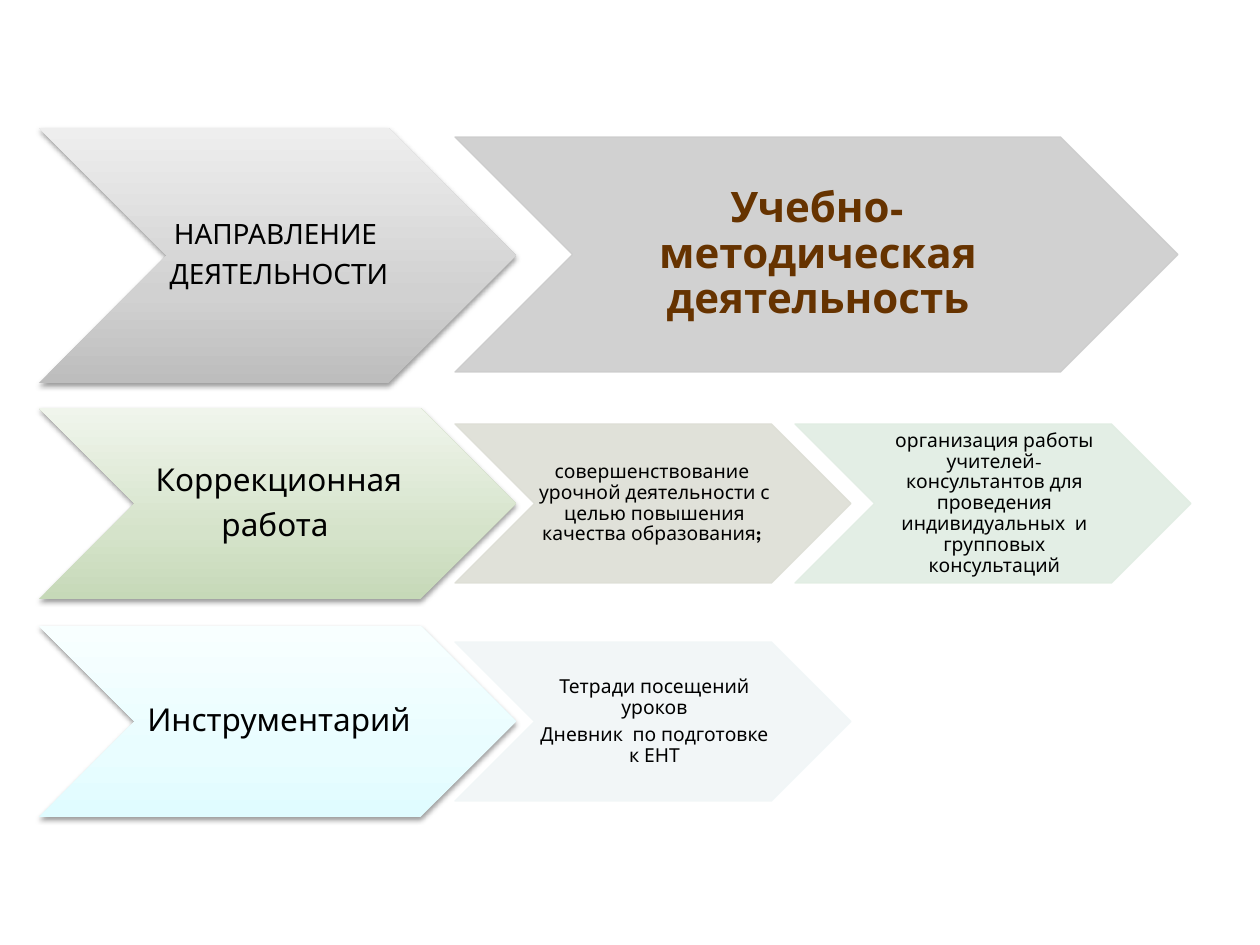
from dataclasses import dataclass

from lxml import etree
from pptx import Presentation
from pptx.dml.color import RGBColor
from pptx.enum.shapes import MSO_SHAPE
from pptx.enum.text import MSO_ANCHOR, PP_ALIGN
from pptx.oxml.ns import qn
from pptx.util import Emu, Pt

CHEVRON = MSO_SHAPE.CHEVRON
MIDDLE = MSO_ANCHOR.MIDDLE
CENTER = PP_ALIGN.CENTER

PX = 914400 / 126
BLANK_LAYOUT = 6

# Columns
LEAD_LEFT, LEAD_WIDTH = 39, 477
DETAIL_LEFT, DETAIL_STEP = 455, 340


@dataclass(frozen=True)
class Theme:
    font: str = "League Spartan"
    ink: str = "000000"
    accent: str = "663300"
    # Gradients run from bottom to top
    grey: tuple = ("BDBDBD", "D1D1D1", "EEEEEE")
    green: tuple = ("C6D9B8", "D5E3CA", "F0F5EC")
    aqua: tuple = ("E0FCFF", "E9FDFF", "F8FFFF")
    # Detail fills
    silver: str = "CCCCCC"
    sand: str = "DDDED5"
    mint: str = "E1EDE3"
    ice: str = "F1F6F7"
    detail_alpha: int = 90
    heading_size: int = 24
    topic_size: int = 18
    caption_size: int = 16
    body_size: int = 11


THEME = Theme()


def px(length):
    return Emu(round(length * PX))


def add_color(parent, color, alpha=None):
    node = etree.SubElement(parent, qn("a:srgbClr"), val=color)
    if alpha is not None:
        etree.SubElement(node, qn("a:alpha"), val=str(alpha * 1000))


def add_chevron(slide, left, top, width, height):
    chevron = slide.shapes.add_shape(
        CHEVRON, px(left), px(top), px(width), px(height))
    chevron.shadow.inherit = False
    return chevron


def write_text(chevron, paragraphs, size, color=THEME.ink, bold=False):
    """Each paragraph is a list of (text, bold) runs or a plain string."""
    frame = chevron.text_frame
    frame.word_wrap = True
    frame.vertical_anchor = MIDDLE
    frame.margin_left, frame.margin_right = px(3), 0
    frame.margin_top = frame.margin_bottom = px(2)
    for index, content in enumerate(paragraphs):
        paragraph = frame.add_paragraph() if index else frame.paragraphs[0]
        paragraph.alignment = CENTER
        paragraph.line_spacing = 0.9
        paragraph.space_after = Pt(round(size * 0.35, 2))
        runs = [(content, bold)] if isinstance(content, str) else content
        for text, run_bold in runs:
            run = paragraph.add_run()
            run.text = text
            run.font.name = THEME.font
            run.font.size = Pt(size)
            run.font.bold = run_bold
            run.font.color.rgb = RGBColor.from_string(color)


def add_lead(slide, top, height, gradient, paragraphs, size):
    """Left chevron with a three-stop gradient and a soft shadow."""
    lead = add_chevron(slide, LEAD_LEFT, top, LEAD_WIDTH, height)
    lead.line.fill.background()
    lead.fill.gradient()
    lead.fill.gradient_angle = 90
    properties = lead.element.spPr
    stops = properties.find(qn("a:gradFill")).find(qn("a:gsLst"))
    for stop in list(stops):
        stops.remove(stop)
    for position, color in zip((0, 35, 100), gradient):
        stop = etree.SubElement(stops, qn("a:gs"), pos=str(position * 1000))
        add_color(stop, color)
    shadow = etree.SubElement(
        properties.find(qn("a:effectLst")), qn("a:outerShdw"),
        blurRad=str(Pt(3.1)), dist=str(Pt(1.6)), dir="5400000", rotWithShape="0")
    add_color(shadow, "000000", 38)
    write_text(lead, paragraphs, size)


def add_detail(slide, column, top, width, height, fill_color, paragraphs,
               **text_format):
    """Translucent chevron to the right of a lead."""
    left = DETAIL_LEFT + column * DETAIL_STEP
    detail = add_chevron(slide, left, top, width, height)
    detail.line.width = Pt(0.75)
    for paint in (detail.fill, detail.line.fill):
        paint.solid()
        paint.fore_color.rgb = RGBColor.from_string(fill_color)
    for node in list(detail.element.spPr.iter(qn("a:srgbClr"))):
        etree.SubElement(node, qn("a:alpha"), val=str(THEME.detail_alpha * 1000))
    write_text(detail, paragraphs, **text_format)


def main():
    deck = Presentation()
    deck.slide_width, deck.slide_height = px(1260), px(945)
    slide = deck.slides.add_slide(deck.slide_layouts[BLANK_LAYOUT])

    # Direction of activity
    add_lead(slide, 128, 255, THEME.grey,
             ["НАПРАВЛЕНИЕ ", "ДЕЯТЕЛЬНОСТИ "], THEME.caption_size)
    add_detail(slide, 0, 137, 723, 235, THEME.silver,
               ["Учебно-методическая деятельность"],
               size=THEME.heading_size, color=THEME.accent, bold=True)

    # Topic rows: top, gradient, topic, details
    rows = [
        (408, THEME.green, ["Коррекционная", "работа "], [
            (THEME.sand, [[
                ("совершенствование  урочной деятельности с целью "
                 "повышения качества образования", False),
                ("; ", True)]]),
            (THEME.mint, [
                "организация работы учителей-консультантов для проведения "
                "индивидуальных  и групповых консультаций"]),
        ]),
        (626, THEME.aqua, ["Инструментарий"], [
            (THEME.ice, ["Тетради посещений уроков",
                         "Дневник  по подготовке к ЕНТ"]),
        ]),
    ]
    for top, gradient, topic, details in rows:
        add_lead(slide, top, 191, gradient, topic, THEME.topic_size)
        for column, (fill_color, paragraphs) in enumerate(details):
            add_detail(slide, column, top + 16, 396, 159, fill_color, paragraphs,
                       size=THEME.body_size)

    deck.save("out.pptx")


if __name__ == "__main__":
    main()
